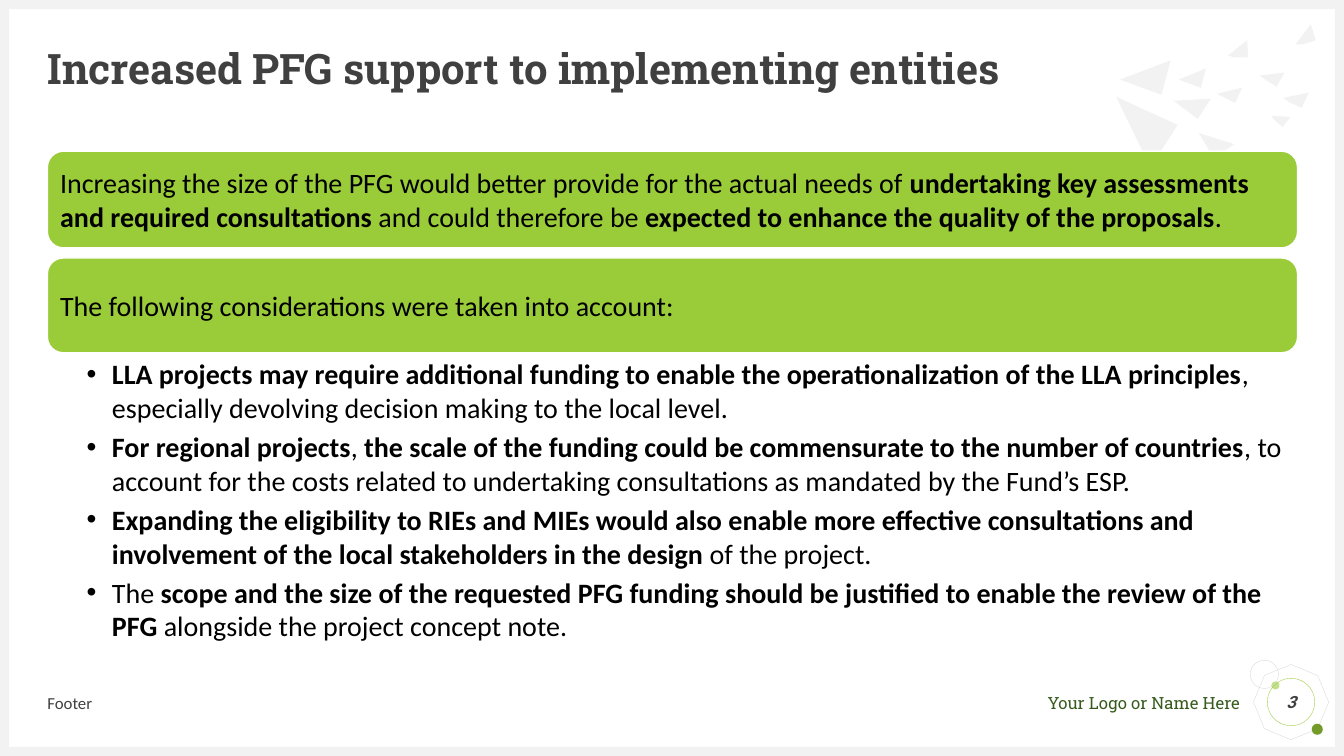
from lxml.etree import SubElement
from pptx import Presentation
from pptx.dml.color import RGBColor
from pptx.enum.shapes import MSO_SHAPE
from pptx.enum.text import MSO_ANCHOR, MSO_AUTO_SIZE, PP_ALIGN
from pptx.oxml.ns import qn
from pptx.util import Inches, Pt

COLORS = {
    "frame": "F2F2F2", "outline": "D9D9D9", "green": "9ACB39",
    "light_green": "C2E088", "dark_green": "749A29", "logo": "375C1E",
    "grey": "404040", "black": "000000", "white": "FFFFFF",
}
SLAB, SANS = "Roboto Slab", "Calibri"
WIDTH, HEIGHT, BORDER = 13.33, 7.5, 0.09
MARGIN, CONTENT_WIDTH = 0.47, 12.4

BODY_FORMAT = {"name": SANS, "size": Pt(20), "color": "black"}
TITLE_FORMAT = {"name": SLAB, "size": Pt(30), "bold": True, "color": "grey"}
FOOTER_FORMAT = {"name": SANS, "size": Pt(12), "color": "grey"}
LOGO_FORMAT = {"name": SLAB, "size": Pt(12), "color": "logo"}
NUMBER_FORMAT = {"name": SLAB, "size": Pt(12), "bold": True, "italic": True, "color": "grey"}

# Corners in hundredths of an inch, measured from the top left of the scatter
SHARDS = [
    [(57, 36), (48, 70), (7, 55)],
    [(97, 74), (84, 94), (60, 76)],
    [(92, 44), (87, 63), (65, 55)],
    [(128, 63), (121, 78), (103, 69)],
    [(133, 16), (134, 33), (120, 33), (114, 31)],
    [(176, 92), (168, 102), (160, 95), (157, 91)],
    [(196, 0), (201, 16), (188, 20), (181, 20)],
    [(170, 48), (162, 62), (145, 51)],
    [(194, 68), (187, 83), (174, 77), (169, 73)],
    [(64, 100), (37, 142), (3, 72)],
    [(120, 119), (100, 133), (85, 108)],
]

# Text runs alternate as (text, bold)
CALLOUTS = [
    (1.5, 0.96, [
        ("Increasing the size of the PFG would better provide for the actual needs of ", False),
        ("undertaking key assessments and required consultations ", True),
        ("and could therefore be ", False),
        ("expected to enhance the quality of the proposals", True),
        (".", False)]),
    (2.56, 0.94, [("The following considerations were taken into account:", False)]),
]
CONSIDERATIONS = [
    [("LLA projects may require additional funding to enable the operationalization"
      " of the LLA principles", True),
     (", especially devolving decision making to the local level.", False)],
    [("For regional projects", True), (", ", False),
     ("the scale of the funding could be commensurate to the number of countries", True),
     (", to account for the costs related to undertaking consultations as mandated"
      " by the Fund’s ESP.", False)],
    [("Expanding the eligibility to RIEs and MIEs would also enable more effective"
      " consultations and involvement of the local stakeholders in the design ", True),
     ("of the project.", False)],
    [("The ", False),
     ("scope and the size of the requested PFG funding should be justified to enable"
      " the review of the PFG ", True),
     ("alongside the project concept note.", False)],
]


def rgb(name):
    return RGBColor.from_string(COLORS[name])


def paint(shape, fill=None, line=None, line_width=0.25):
    shape.shadow.inherit = False
    if fill:
        shape.fill.solid()
        shape.fill.fore_color.rgb = rgb(fill)
    else:
        shape.fill.background()
    if line:
        shape.line.color.rgb = rgb(line)
        shape.line.width = Pt(line_width)
    else:
        shape.line.fill.background()


def add_preset(slide, preset, box, **colors):
    shape = slide.shapes.add_shape(preset, *map(Inches, box))
    paint(shape, **colors)
    return shape


def place(shape, box):
    shape.left, shape.top, shape.width, shape.height = map(Inches, box)


def set_frame(shape, insets=(0, 0, 0, 0), anchor=MSO_ANCHOR.MIDDLE):
    frame = shape.text_frame
    frame.word_wrap = True
    frame.auto_size = MSO_AUTO_SIZE.NONE
    frame.vertical_anchor = anchor
    sides = ("margin_left", "margin_top", "margin_right", "margin_bottom")
    for side, inset in zip(sides, insets):
        setattr(frame, side, Inches(inset))
    return frame


def write_runs(paragraph, runs, font_format, align=PP_ALIGN.LEFT):
    paragraph.alignment = align
    paragraph.space_before = Pt(0)
    for text, bold in runs:
        run = paragraph.add_run()
        run.text = text
        run.font.bold = bold
        for attribute, value in font_format.items():
            if attribute == "color":
                run.font.color.rgb = rgb(value)
            else:
                setattr(run.font, attribute, value)


def add_label(slide, box, text, font_format, align=PP_ALIGN.LEFT, anchor=MSO_ANCHOR.MIDDLE):
    label = slide.shapes.add_textbox(*map(Inches, box))
    frame = set_frame(label, anchor=anchor)
    write_runs(frame.paragraphs[0], [(text, False)], font_format, align)


def add_border(slide, width, height):
    for box in [(0, height - BORDER, width, BORDER), (0, 0, width, BORDER),
                (0, 0, BORDER, height), (width - BORDER, 0, BORDER, height)]:
        add_preset(slide, MSO_SHAPE.RECTANGLE, box, fill="frame")


def add_shards(slide, left, top):
    for corners in SHARDS:
        points = [(left * 100 + x, top * 100 + y) for x, y in corners]
        builder = slide.shapes.build_freeform(*points[0], scale=Inches(0.01))
        builder.add_line_segments(points[1:], close=True)
        paint(builder.convert_to_shape(), fill="frame")


def add_number_badge(slide, left, top, number):
    octagon = add_preset(slide, MSO_SHAPE.OCTAGON, (left + 0.06, top + 0.07, 0.69, 0.69),
                         line="outline")
    octagon.rotation = 22.7
    for x, y, size, colors in [
        (0.21, 0.21, 0.08, {"fill": "light_green"}),
        (0.61, 0.63, 0.11, {"fill": "dark_green"}),
        (0, 0, 0.28, {"line": "outline"}),
        (0.17, 0.18, 0.47, {"line": "green"}),
    ]:
        circle = add_preset(slide, MSO_SHAPE.OVAL, (left + x, top + y, size, size), **colors)
    frame = set_frame(circle)
    write_runs(frame.paragraphs[0], [(number, True)], NUMBER_FORMAT, PP_ALIGN.CENTER)


def fill_title(slide, box, text):
    title = slide.shapes.title
    place(title, box)
    paragraph = set_frame(title).paragraphs[0]
    paragraph.line_spacing = 0.9
    write_runs(paragraph, [(text, True)], TITLE_FORMAT)


def add_callout(slide, box, runs):
    callout = add_preset(slide, MSO_SHAPE.ROUNDED_RECTANGLE, box,
                         fill="green", line="white", line_width=1)
    frame = set_frame(callout, (0.08,) * 4)
    write_runs(frame.paragraphs[0], runs, BODY_FORMAT)


def fill_considerations(slide, box, items):
    body = slide.placeholders[1]
    place(body, box)
    frame = set_frame(body, (0.39, 0.03, 0.16, 0.03), MSO_ANCHOR.TOP)
    for index, runs in enumerate(items):
        paragraph = frame.add_paragraph() if index else frame.paragraphs[0]
        properties = paragraph._p.get_or_add_pPr()
        properties.set("marL", str(Inches(0.25)))
        properties.set("indent", str(-Inches(0.25)))
        SubElement(properties, qn("a:buFont"), typeface="Arial")
        SubElement(properties, qn("a:buChar"), char="•")
        paragraph.space_after = Pt(4)
        write_runs(paragraph, runs, BODY_FORMAT)


def main():
    presentation = Presentation()
    presentation.slide_width, presentation.slide_height = Inches(WIDTH), Inches(HEIGHT)
    slide = presentation.slides.add_slide(presentation.slide_layouts[1])
    add_border(slide, WIDTH, HEIGHT)
    add_shards(slide, 11.04, 0.24)
    fill_title(slide, (MARGIN, 0.47, CONTENT_WIDTH, 0.47),
               "Increased PFG support to implementing entities")
    for top, height, runs in CALLOUTS:
        add_callout(slide, (MARGIN, top, CONTENT_WIDTH, height), runs)
    fill_considerations(slide, (MARGIN, 3.51, CONTENT_WIDTH, 3.02), CONSIDERATIONS)
    add_label(slide, (MARGIN, 6.77, 9, 0.4), "Footer", FOOTER_FORMAT)
    add_label(slide, (9.55, 6.87, 2.75, 0.2), "Your Logo or Name Here", LOGO_FORMAT,
              PP_ALIGN.RIGHT, MSO_ANCHOR.TOP)
    add_number_badge(slide, 12.4, 6.55, "3")
    presentation.save("out.pptx")


if __name__ == "__main__":
    main()
